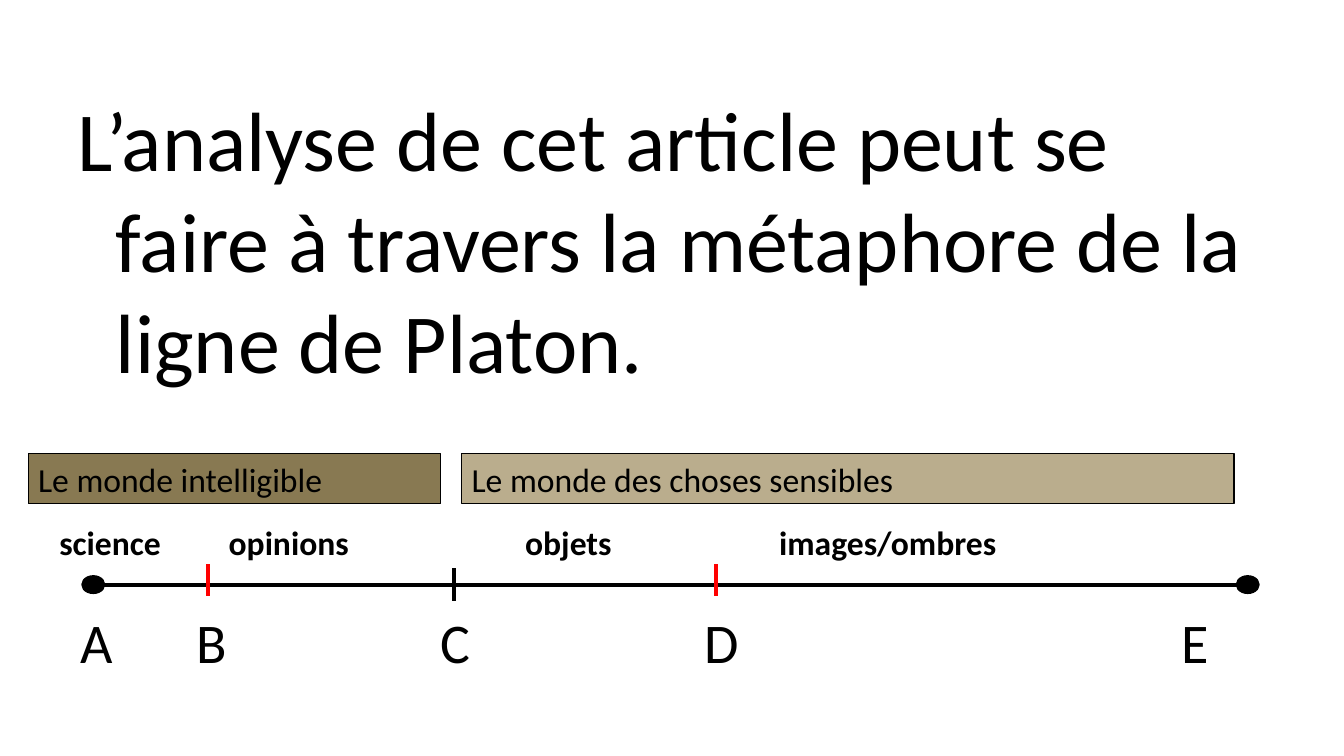
import pptx
import pptx.util
import pptx.dml.color
import pptx.enum.shapes
import pptx.enum.text
import pptx.oxml.ns
import lxml.etree

PX = 9144
THEME = {
    "font": "Calibri",
    "ink": "000000",
    "division": "FF0000",
    "intelligible": "887952",
    "sensible": "BAAD8D",
    "statement": 60,
    "point": 40,
    "label": 24,
}


def write(shape, text, size, bold=False):
    frame = shape.text_frame
    frame.word_wrap = True
    frame.text = text
    paragraph = frame.paragraphs[0]
    paragraph.alignment = pptx.enum.text.PP_ALIGN.LEFT
    font = paragraph.runs[0].font
    font.name = THEME["font"]
    font.size = pptx.util.Pt(THEME[size])
    font.bold = bold
    font.color.rgb = pptx.dml.color.RGBColor.from_string(THEME["ink"])
    return paragraph


def place(kind, left, top, width, height, fill, outline):
    shape = slide.shapes.add_shape(kind, left * PX, top * PX, width * PX, height * PX)
    shape.shadow.inherit = False
    shape.fill.solid()
    shape.fill.fore_color.rgb = pptx.dml.color.RGBColor.from_string(THEME[fill])
    shape.line.color.rgb = pptx.dml.color.RGBColor.from_string(THEME["ink"])
    shape.line.width = pptx.util.Pt(outline)
    return shape


deck = pptx.Presentation()
deck.slide_width = 1333 * PX
deck.slide_height = 750 * PX
slide = deck.slides.add_slide(deck.slide_layouts[1])
heading = slide.shapes.title.element
heading.getparent().remove(heading)

statement = slide.placeholders[1]
statement.left, statement.top = 67 * PX, 82 * PX
statement.width, statement.height = 1200 * PX, 588 * PX
sentence = write(
    statement,
    "L’analyse de cet article peut se faire à travers la métaphore de la ligne de Platon.",
    "statement",
)
statement.text_frame.auto_size = pptx.enum.text.MSO_AUTO_SIZE.NONE
indent = sentence._p.get_or_add_pPr()
indent.set("marL", str(38 * PX))
indent.set("indent", str(-38 * PX))
lxml.etree.SubElement(indent, pptx.oxml.ns.qn("a:buNone"))

for x1, y1, x2, y2, colour in [
    (93, 580, 1227, 580, "ink"),
    (450, 564, 450, 596, "ink"),
    (710, 560, 710, 591, "division"),
    (206, 560, 206, 591, "division"),
]:
    stroke = slide.shapes.add_connector(
        pptx.enum.shapes.MSO_CONNECTOR.STRAIGHT, x1 * PX, y1 * PX, x2 * PX, y2 * PX
    )
    stroke.line.color.rgb = pptx.dml.color.RGBColor.from_string(THEME[colour])
    stroke.line.width = pptx.util.Pt(3)
    lxml.etree.SubElement(stroke.element.spPr, pptx.oxml.ns.qn("a:effectLst"))

for left in (82, 1227):
    place(pptx.enum.shapes.MSO_SHAPE.OVAL, left, 572, 21, 16, "ink", 2)

for world, left, width, fill in [
    ("Le monde des choses sensibles", 458, 766, "sensible"),
    ("Le monde intelligible", 28, 409, "intelligible"),
]:
    band = place(pptx.enum.shapes.MSO_SHAPE.RECTANGLE, left, 450, width, 50, fill, 0.75)
    write(band, world, "label")

points = [(name, left, 598, 105, 77, "point") for name, left in
          [("A", 70), ("B", 185), ("C", 427), ("D", 689), ("E", 1162)]]
segments = [(name, left, 513, width, 50, "label") for name, left, width in
            [("images/ombres", 763, 367), ("objets", 511, 168),
             ("opinions", 217, 210), ("science", 49, 144)]]
for name, left, top, width, height, size in points + segments:
    caption = slide.shapes.add_textbox(left * PX, top * PX, width * PX, height * PX)
    write(caption, name, size, bold=size == "label")

deck.save("out.pptx")
